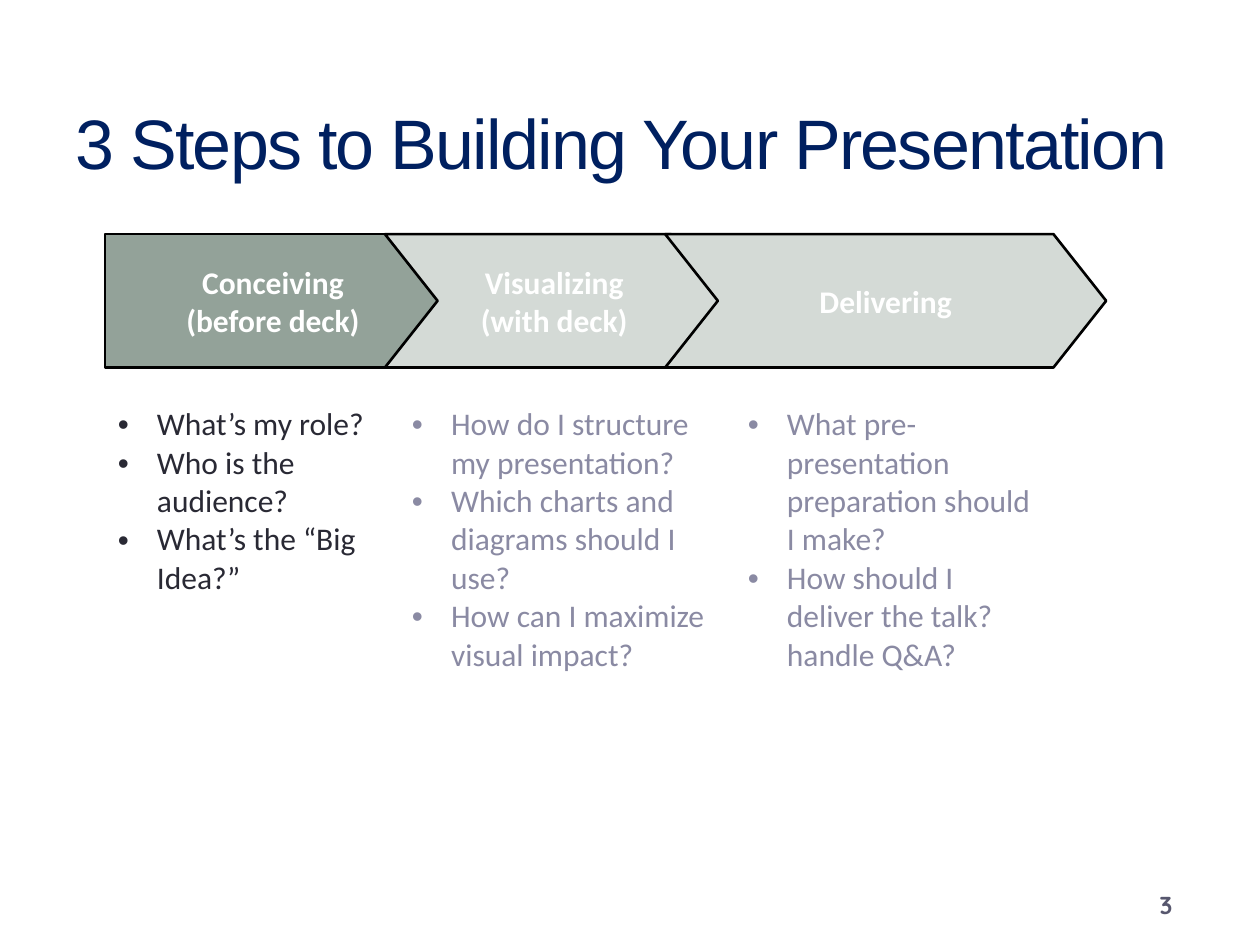
"""Build the slide on the three steps to a presentation."""
from dataclasses import dataclass

from lxml.etree import SubElement
from pptx import Presentation
from pptx.dml.color import RGBColor
from pptx.enum.shapes import MSO_SHAPE as Preset
from pptx.enum.text import MSO_ANCHOR as Anchor, MSO_AUTO_SIZE as AutoSize, PP_ALIGN as Align
from pptx.oxml.ns import qn
from pptx.util import Cm, Pt


@dataclass(frozen=True)
class Theme:
    heading_face: str = "Arial"
    text_face: str = "Calibri"
    number_face: str = "Quicksand"
    heading_size: int = 40
    text_size: int = 18
    number_size: int = 14
    heading: str = "002060"
    number: str = "57576E"
    active: str = "93A299"
    inactive: str = "D4DAD6"
    active_text: str = "292934"
    inactive_text: str = "8A8AA3"
    white: str = "FFFFFF"
    outline: str = "000000"


@dataclass(frozen=True)
class Step:
    label: tuple[str, ...]
    left: float
    width: float
    notch: float
    column_width: float
    fill: str
    text_color: str
    questions: tuple[str, ...]


THEME = Theme()
CONTENT_LEFT = 2.12
STEPS = (
    Step(("Conceiving", "(before deck)"), CONTENT_LEFT, 6.77, 0, 5.93,
         THEME.active, THEME.active_text,
         ("What’s my role?", "Who is the audience?", "What’s the “Big Idea?”")),
    Step(("Visualizing (with deck)",), 7.76, 6.83, 0.395, 6.77,
         THEME.inactive, THEME.inactive_text,
         ("How do I structure my presentation?",
          "Which charts and diagrams should I use?",
          "How can I maximize visual impact?")),
    Step(("Delivering",), 13.41, 8.89, 0.395, 6.35,
         THEME.inactive, THEME.inactive_text,
         ("What pre-presentation preparation should I make?",
          "How should I deliver the talk? handle Q&A?")),
)


def add_text(paragraph, text: str, face: str, size: int, color: str, bold: bool = False):
    """Add one formatted run and return it."""
    run = paragraph.add_run()
    run.text = text
    run.font.name = face
    run.font.size = Pt(size)
    run.font.bold = bold
    run.font.color.rgb = RGBColor.from_string(color)
    return run


def fill_solid(target, color: str) -> None:
    """Give a shape or cell a plain fill."""
    target.fill.solid()
    target.fill.fore_color.rgb = RGBColor.from_string(color)


def draw_title(slide, text: str) -> None:
    """Place and format the title placeholder."""
    title = slide.shapes.title
    title.left, title.top, title.width, title.height = Cm(1.27), Cm(1.48), Cm(22.86), Cm(2.74)
    frame = title.text_frame
    frame.auto_size = AutoSize.NONE
    frame.vertical_anchor = Anchor.MIDDLE
    heading = frame.paragraphs[0]
    heading.alignment = Align.LEFT
    run = add_text(heading, text, THEME.heading_face, THEME.heading_size, THEME.heading)
    run._r.get_or_add_rPr().set("spc", "-100")


def draw_page_number(slide, number: str) -> None:
    """Write the page number at the bottom right."""
    frame = slide.shapes.add_textbox(Cm(22.02), Cm(17.78), Cm(2.97), Cm(0.91)).text_frame
    frame.word_wrap = True
    frame.vertical_anchor = Anchor.MIDDLE
    paragraph = frame.paragraphs[0]
    paragraph.alignment = Align.CENTER
    add_text(paragraph, number, THEME.number_face, THEME.number_size, THEME.number, bold=True)


def draw_chevron(slide, step: Step) -> None:
    """Draw the arrow block of one step."""
    chevron = slide.shapes.add_shape(
        Preset.CHEVRON, Cm(step.left), Cm(4.72), Cm(step.width), Cm(2.69))
    chevron.adjustments[0] = step.notch
    chevron.shadow.inherit = False
    fill_solid(chevron, step.fill)
    chevron.line.color.rgb = RGBColor.from_string(THEME.outline)
    chevron.line.width = Pt(1.5)
    frame = chevron.text_frame
    frame.word_wrap = True
    frame.vertical_anchor = Anchor.MIDDLE
    paragraph = frame.paragraphs[0]
    paragraph.alignment = Align.CENTER
    for index, line in enumerate(step.label):
        if index:
            paragraph.add_line_break()
        add_text(paragraph, line, THEME.text_face, THEME.text_size, THEME.white, bold=True)


def set_borders(cell, color: str) -> None:
    """Put a one-point border on every side of a cell."""
    properties = cell._tc.get_or_add_tcPr()
    for index, side in enumerate(("a:lnL", "a:lnR", "a:lnT", "a:lnB")):
        border = SubElement(properties, qn(side), w=str(Pt(1)))
        properties.insert(index, border)
        SubElement(SubElement(border, qn("a:solidFill")), qn("a:srgbClr"), val=color)


def add_bullet(paragraph) -> None:
    """Give a paragraph a hanging bullet."""
    properties = paragraph._p.get_or_add_pPr()
    properties.set("marL", str(Cm(0.79)))
    properties.set("indent", str(-Cm(0.79)))
    SubElement(properties, qn("a:buFont"), typeface="Arial")
    SubElement(properties, qn("a:buChar"), char="•")


def draw_questions(slide, steps: tuple[Step, ...]) -> None:
    """Lay out the questions of all steps in a one-row table."""
    total_width = sum(step.column_width for step in steps)
    holder = slide.shapes.add_table(
        1, len(steps), Cm(CONTENT_LEFT), Cm(8.05), Cm(total_width), Cm(7.87))
    table = holder.table
    table.first_row = False
    table.horz_banding = False
    table.rows[0].height = Cm(1.04)
    for column, cell, step in zip(table.columns, table.rows[0].cells, steps):
        column.width = Cm(step.column_width)
        fill_solid(cell, THEME.white)
        set_borders(cell, THEME.white)
        frame = cell.text_frame
        for index, question in enumerate(step.questions):
            paragraph = frame.add_paragraph() if index else frame.paragraphs[0]
            add_bullet(paragraph)
            add_text(paragraph, question, THEME.text_face, THEME.text_size, step.text_color)
    holder.height = Cm(7.87)


def main() -> None:
    """Build and save the presentation."""
    deck = Presentation()
    deck.slide_width, deck.slide_height = Cm(25.4), Cm(19.05)
    slide = deck.slides.add_slide(deck.slide_layouts[5])
    draw_title(slide, "3 Steps to Building Your Presentation")
    draw_page_number(slide, "3")
    draw_questions(slide, STEPS)
    for step in STEPS:
        draw_chevron(slide, step)
    deck.save("out.pptx")


if __name__ == "__main__":
    main()
